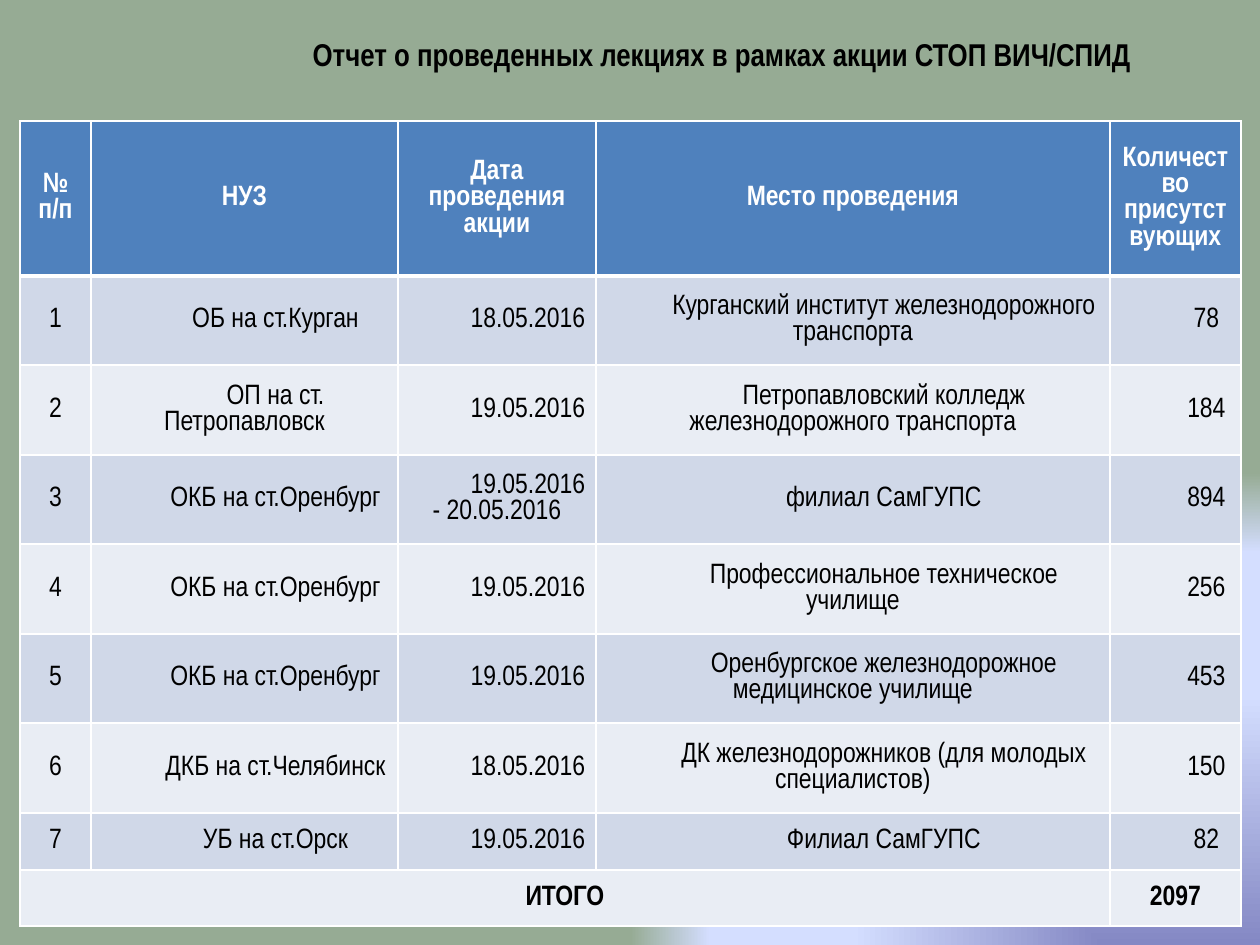
from dataclasses import dataclass

from lxml import etree
from pptx import Presentation
from pptx import util as u
from pptx.dml.color import RGBColor
from pptx.enum import text as t
from pptx.oxml import ns


@dataclass(frozen=True)
class Theme:
    font: str = "Arial Narrow"
    title_size: int = 18
    table_size: int = 16
    ink: str = "000000"
    white: str = "FFFFFF"
    header: str = "4F81BD"
    bands: tuple = ("E9EDF4", "D0D8E8")
    backdrop: tuple = ((0, "8488C4"), (53, "D4DEFF"), (83, "D4DEFF"), (100, "96AB94"))


theme = Theme()
PX = u.Inches(1) / 126
INDENT = 62
MARGIN = 9


def px(length):
    return u.Emu(round(length * PX))


def write(frame, content, size=theme.table_size, color=theme.ink, bold=False, indent=0):
    paragraph = frame.paragraphs[0]
    paragraph.alignment = t.PP_ALIGN.CENTER
    if indent:
        properties = paragraph._p.get_or_add_pPr()
        properties.set("marL", "0")
        properties.set("indent", str(px(indent)))
    run = paragraph.add_run()
    run.text = content
    run.font.name = theme.font
    run.font.size = u.Pt(size)
    run.font.bold = bold
    run.font.color.rgb = RGBColor.from_string(color)


presentation = Presentation()
presentation.slide_width = px(1260)
presentation.slide_height = px(945)
slide = presentation.slides.add_slide(presentation.slide_layouts[5])

slide.background.fill.solid()
background = slide.element.find(".//" + ns.qn("p:bgPr"))
gradient = etree.Element(ns.qn("a:gradFill"), rotWithShape="1")
stops = etree.SubElement(gradient, ns.qn("a:gsLst"))
for position, color in theme.backdrop:
    stop = etree.SubElement(stops, ns.qn("a:gs"), pos=str(position * 1000))
    etree.SubElement(stop, ns.qn("a:srgbClr"), val=color)
rectangle = etree.SubElement(gradient, ns.qn("a:path"), path="rect")
etree.SubElement(rectangle, ns.qn("a:fillToRect"), l="100000", t="100000")
background.replace(background[0], gradient)

columns = [71, 307, 198, 514, 131]
rows = [155] + [89, 90] * 3 + [57, 56]
records = [
    ("№ п/п", "НУЗ", "Дата проведения акции", "Место проведения", "Количество присутствующих"),
    ("1", "ОБ на ст.Курган", "18.05.2016", "Курганский институт железнодорожного транспорта", "78"),
    ("2", "ОП на ст. Петропавловск", "19.05.2016", "Петропавловский колледж железнодорожного транспорта", "184"),
    ("3", "ОКБ на ст.Оренбург", "19.05.2016 - 20.05.2016", "филиал СамГУПС", "894"),
    ("4", "ОКБ на ст.Оренбург", "19.05.2016", "Профессиональное техническое училище", "256"),
    ("5", "ОКБ на ст.Оренбург", "19.05.2016", "Оренбургское железнодорожное медицинское училище", "453"),
    ("6", "ДКБ на ст.Челябинск", "18.05.2016", "ДК железнодорожников (для молодых специалистов)", "150"),
    ("7", "УБ на ст.Орск", "19.05.2016", "Филиал СамГУПС", "82"),
    ("ИТОГО", "", "", "", "2097"),
]
total_row = len(records) - 1

table = slide.shapes.add_table(
    len(rows), len(columns), px(20), px(121), px(sum(columns)), px(sum(rows))
).table
for column, width in zip(table.columns, columns):
    column.width = px(width)
for row, height in zip(table.rows, rows):
    row.height = px(height)
table.cell(total_row, 0).merge(table.cell(total_row, 3))

for row_index, record in enumerate(records):
    is_header = row_index == 0
    is_total = row_index == total_row
    for column_index, content in enumerate(record):
        cell = table.cell(row_index, column_index)
        cell.vertical_anchor = t.MSO_ANCHOR.MIDDLE
        is_indented = column_index > 0 and not is_header and not is_total
        if is_indented:
            cell.margin_left = cell.margin_right = px(MARGIN)
            cell.margin_top = cell.margin_bottom = 0
        for side in ("lnL", "lnR", "lnT", "lnB"):
            is_rule = (row_index, side) in ((0, "lnB"), (1, "lnT"))
            border = etree.SubElement(
                cell._tc.get_or_add_tcPr(), ns.qn(f"a:{side}"), w=str(u.Pt(3 if is_rule else 1))
            )
            fill = etree.SubElement(border, ns.qn("a:solidFill"))
            etree.SubElement(fill, ns.qn("a:srgbClr"), val=theme.white)
        cell.fill.solid()
        cell.fill.fore_color.rgb = RGBColor.from_string(
            theme.header if is_header else theme.bands[row_index % 2]
        )
        if content:
            write(
                cell.text_frame,
                content,
                color=theme.white if is_header else theme.ink,
                bold=is_header or is_total,
                indent=INDENT if is_indented else 0,
            )

title = slide.shapes.title
title.left, title.top, title.width, title.height = px(217), px(29), px(955), px(50)
title.text_frame.word_wrap = True
title.text_frame.auto_size = t.MSO_AUTO_SIZE.SHAPE_TO_FIT_TEXT
title.text_frame.vertical_anchor = t.MSO_ANCHOR.MIDDLE
write(
    title.text_frame,
    "Отчет о проведенных лекциях в рамках акции СТОП ВИЧ/СПИД ",
    size=theme.title_size,
    bold=True,
    indent=INDENT,
)

presentation.save("out.pptx")
